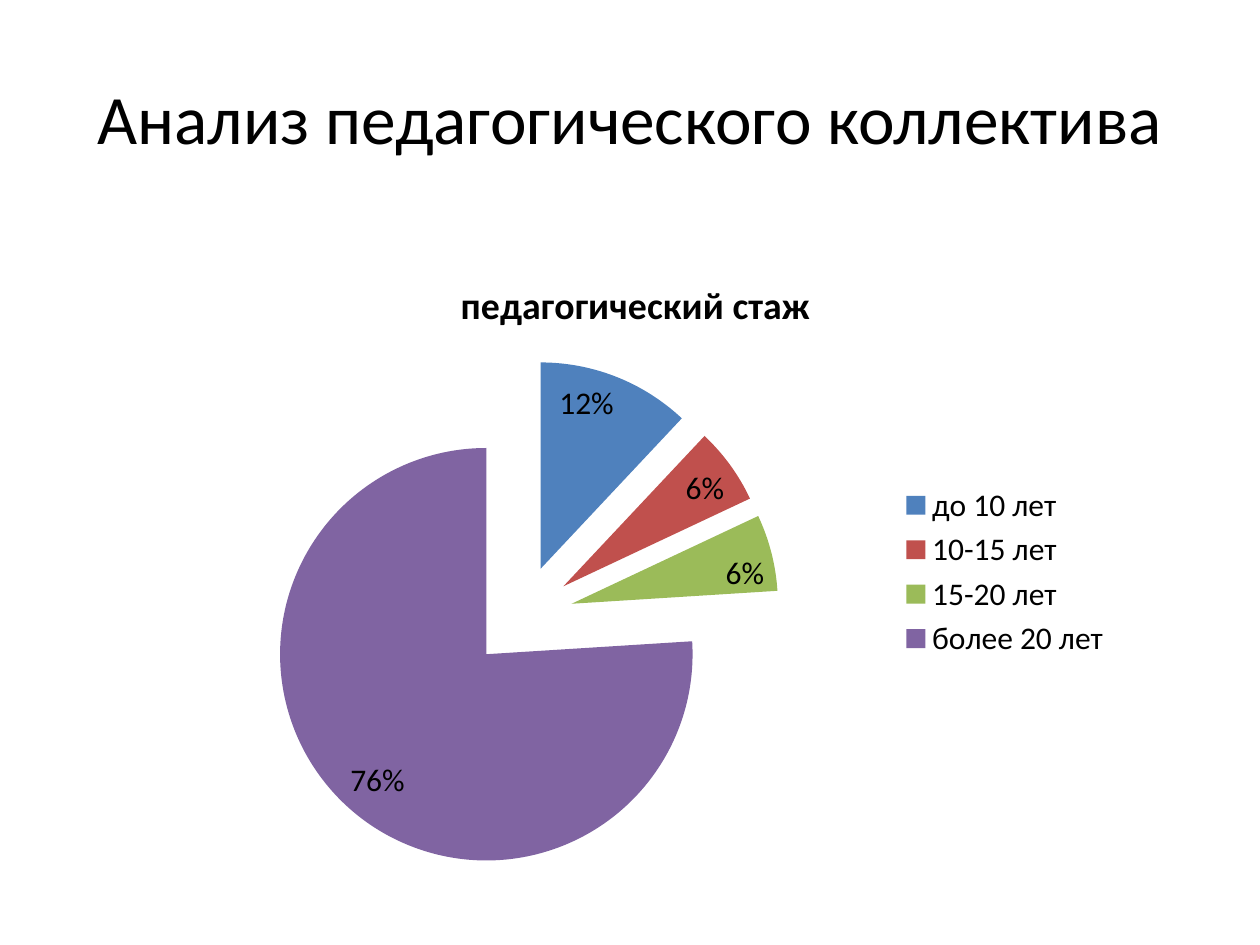
from lxml import etree
from pptx import Presentation
from pptx.chart.data import CategoryChartData
from pptx.dml.color import RGBColor
from pptx.enum.chart import XL_CHART_TYPE, XL_LABEL_POSITION, XL_LEGEND_POSITION
from pptx.enum.text import MSO_ANCHOR, PP_ALIGN
from pptx.oxml.ns import qn
from pptx.util import Cm, Pt

TITLE = "Анализ педагогического коллектива"
CHART_TITLE = "педагогический стаж"
EXPLOSION = 25
COLORS = {
    "text": "000000",
    "до 10 лет": "4F81BD",
    "10-15 лет": "C0504D",
    "15-20 лет": "9BBB59",
    "более 20 лет": "8064A2",
}
SHARES = {
    "до 10 лет": 0.12,
    "10-15 лет": 0.06,
    "15-20 лет": 0.06,
    "более 20 лет": 0.76,
}


def set_font(font, size, bold=False):
    font.name = "Calibri"
    font.size = Pt(size)
    font.bold = bold
    font.color.rgb = RGBColor.from_string(COLORS["text"])


def add_title(s):
    sp = s.shapes.add_textbox(Cm(1.27), Cm(0.76), Cm(22.86), Cm(3.18))
    tf = sp.text_frame
    tf.word_wrap = True
    tf.vertical_anchor = MSO_ANCHOR.MIDDLE
    p = tf.paragraphs[0]
    p.text = TITLE
    p.alignment = PP_ALIGN.CENTER
    set_font(p.font, 39.6)


def explode(series, percent):
    """Pull all slices of a pie series away from its centre."""
    explosion = etree.Element(qn("c:explosion"), val=str(percent))
    series._element.find(qn("c:tx")).addnext(explosion)


def add_pie(s):
    data = CategoryChartData(number_format="0%")
    data.categories = list(SHARES)
    data.add_series(CHART_TITLE, list(SHARES.values()))
    chart = s.shapes.add_chart(
        XL_CHART_TYPE.PIE, Cm(2.97), Cm(5.08), Cm(19.69), Cm(12.9), data
    ).chart
    set_font(chart.font, 18)

    chart.has_title = True
    p = chart.chart_title.text_frame.paragraphs[0]
    p.text = CHART_TITLE
    set_font(p.font, 21.6, bold=True)

    chart.has_legend = True
    chart.legend.position = XL_LEGEND_POSITION.RIGHT
    chart.legend.include_in_layout = False
    set_font(chart.legend.font, 18)

    plot = chart.plots[0]
    plot.vary_by_categories = True
    series = plot.series[0]
    explode(series, EXPLOSION)
    for i, category in enumerate(SHARES):
        fill = series.points[i].format.fill
        fill.solid()
        fill.fore_color.rgb = RGBColor.from_string(COLORS[category])

    labels = series.data_labels
    labels.show_value = True
    labels.number_format = "0%"
    labels.number_format_is_linked = False
    labels.position = XL_LABEL_POSITION.INSIDE_END
    set_font(labels.font, 18)


def main():
    prs = Presentation()
    prs.slide_width, prs.slide_height = Cm(25.4), Cm(19.05)
    s = prs.slides.add_slide(prs.slide_layouts[6])
    add_title(s)
    add_pie(s)
    prs.save("out.pptx")


if __name__ == "__main__":
    main()
